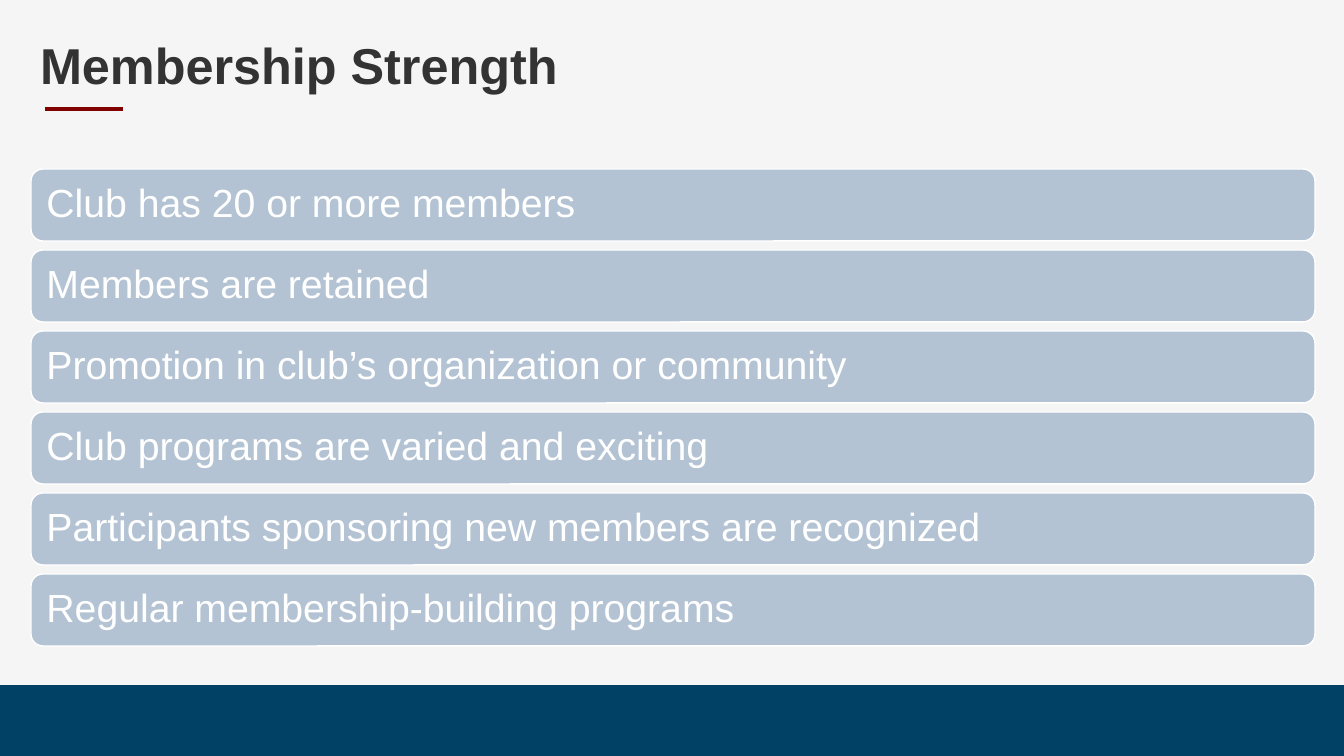
"""Build the Membership Strength slide."""
import pptx
import pptx.dml.color
import pptx.enum.shapes
import pptx.enum.text
import pptx.oxml
import pptx.util

SCALE = 12192000 / 1344
KIND = pptx.enum.shapes.MSO_SHAPE
GOALS = [
    "Club has 20 or more members",
    "Members are retained",
    "Promotion in club’s organization or community",
    "Club programs are varied and exciting",
    "Participants sponsoring new members are recognized",
    "Regular membership-building programs",
]


def px(*sizes):
    return [pptx.util.Emu(round(size * SCALE)) for size in sizes]


def paint(color, tone):
    color.rgb = pptx.dml.color.RGBColor.from_string(tone)


def apply(item, looks):
    for name, value in looks.items():
        setattr(item, name, value)


def write(shape, text, size, tone, inset, bold=False):
    frame = shape.text_frame
    side, edge = px(inset, 5)
    apply(frame, {
        "word_wrap": True,
        "vertical_anchor": pptx.enum.text.MSO_ANCHOR.MIDDLE,
        "margin_left": side, "margin_right": side,
        "margin_top": edge, "margin_bottom": edge,
    })
    para = frame.paragraphs[0]
    apply(para, {"text": text, "line_spacing": 0.9,
                 "alignment": pptx.enum.text.PP_ALIGN.LEFT})
    font = para.runs[0].font
    apply(font, {"name": "Arial", "size": pptx.util.Pt(size), "bold": bold})
    paint(font.color, tone)


def add_block(slide, kind, box, fill, line=None):
    shape = slide.shapes.add_shape(kind, *px(*box))
    shape.shadow.inherit = False
    shape.fill.solid()
    paint(shape.fill.fore_color, fill)
    if line:
        paint(shape.line.color, line)
        shape.line.width = pptx.util.Pt(1)
    else:
        shape.line.fill.background()
    return shape


def add_rule(slide, ends, tone):
    straight = pptx.enum.shapes.MSO_CONNECTOR.STRAIGHT
    rule = slide.shapes.add_connector(straight, *px(*ends))
    paint(rule.line.color, tone)
    rule.line.width = pptx.util.Pt(2.25)
    space = "http://schemas.openxmlformats.org/drawingml/2006/main"
    blank = pptx.oxml.parse_xml(f'<a:effectLst xmlns:a="{space}"/>')
    rule._element.spPr.append(blank)


def main():
    deck = pptx.Presentation()
    deck.slide_width, deck.slide_height = px(1344, 756)
    slide = deck.slides.add_slide(deck.slide_layouts[6])
    back = slide.background.fill
    back.solid()
    paint(back.fore_color, "F5F5F5")

    add_block(slide, KIND.RECTANGLE, (0, 685, 1344, 71), "004165")
    add_rule(slide, (45, 109, 123, 109), "800000")
    title = slide.shapes.add_textbox(*px(30, 32, 1284, 72))
    write(title, "Membership Strength", 36, "333333", 10, bold=True)
    for row, goal in enumerate(GOALS):
        box = (31, 169 + 81 * row, 1284, 72)
        bar = add_block(slide, KIND.ROUNDED_RECTANGLE, box, "B3C3D3", "FFFFFF")
        write(bar, goal, 28, "FFFFFF", 12)
    deck.save("out.pptx")


if __name__ == "__main__":
    main()
